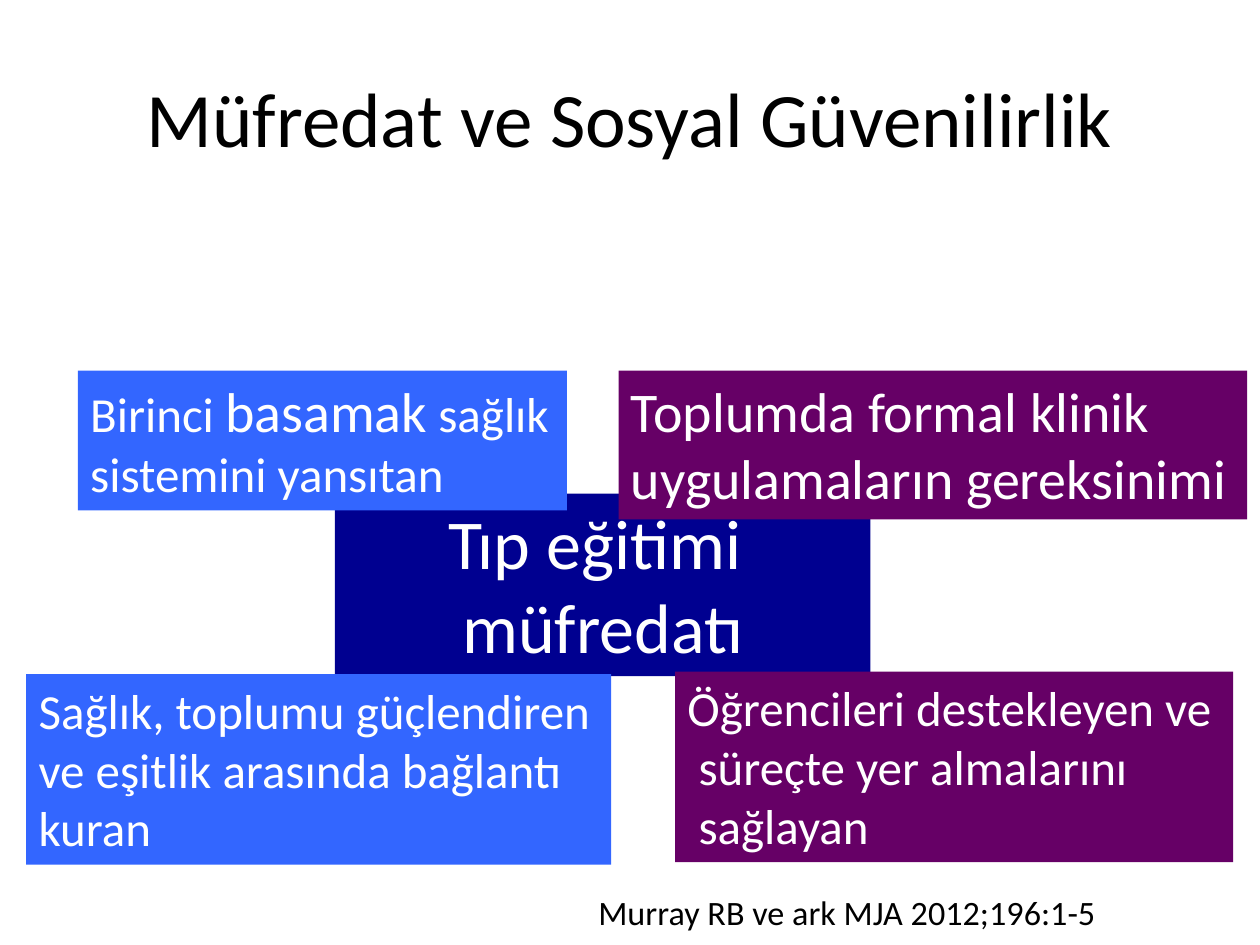
from pptx import Presentation
from pptx.dml.color import RGBColor
from pptx.enum.text import MSO_ANCHOR, MSO_AUTO_SIZE, PP_ALIGN
from pptx.util import Cm, Pt

BLACK = RGBColor(0x00, 0x00, 0x00)
WHITE = RGBColor(0xFF, 0xFF, 0xFF)
NAVY = RGBColor(0x00, 0x00, 0x90)
BLUE = RGBColor(0x33, 0x66, 0xFF)
PLUM = RGBColor(0x66, 0x00, 0x66)


def write(frame, lines, size=28, color=WHITE, align=PP_ALIGN.LEFT, font="Calibri"):
    """Fill a frame; a line is a string or a list of (text, size) parts."""
    for i, line in enumerate(lines):
        par = frame.add_paragraph() if i else frame.paragraphs[0]
        par.alignment = align
        parts = [(line, size)] if isinstance(line, str) else line
        for text, points in parts:
            run = par.add_run()
            run.text = text
            run.font.name = font
            run.font.size = Pt(points)
            run.font.color.rgb = color


class Deck:
    def __init__(self, wide, high):
        self.show = Presentation()
        self.show.slide_width, self.show.slide_height = Cm(wide), Cm(high)
        self.slide = self.show.slides.add_slide(self.show.slide_layouts[5])

    def title(self, text, place):
        head = self.slide.shapes.title
        head.left, head.top, head.width, head.height = map(Cm, place)
        head.text_frame.vertical_anchor = MSO_ANCHOR.MIDDLE
        write(head.text_frame, [text], size=44, color=BLACK, align=PP_ALIGN.CENTER)

    def box(self, lines, place, fill, wrap=False, **style):
        item = self.slide.shapes.add_textbox(*map(Cm, place))
        item.fill.solid()
        item.fill.fore_color.rgb = fill
        frame = item.text_frame
        frame.word_wrap = wrap
        frame.auto_size = MSO_AUTO_SIZE.SHAPE_TO_FIT_TEXT
        write(frame, lines, **style)

    def note(self, text, place):
        frame = self.slide.shapes.add_textbox(*map(Cm, place)).text_frame
        frame.word_wrap = True
        frame.vertical_anchor = MSO_ANCHOR.MIDDLE
        write(frame, [text], size=19.5, color=BLACK, align=PP_ALIGN.CENTER)


def main():
    deck = Deck(25.4, 19.05)
    deck.title("Müfredat ve Sosyal Güvenilirlik", (1.27, 0.76, 22.86, 3.18))

    # Core theme, behind the four corner boxes
    deck.box(["Tıp eğitimi ", "müfredatı"], (6.75, 9.95, 10.8, 3.68), NAVY,
             wrap=True, size=40, align=PP_ALIGN.CENTER)

    # Left side
    deck.box([[("Birinci ", 28), ("basamak", 32), (" sağlık", 28)],
              "sistemini yansıtan"], (1.57, 7.47, 9.86, 2.82), BLUE)
    deck.box(["Sağlık, toplumu güçlendiren", "ve eşitlik arasında bağlantı", "kuran"],
             (0.53, 13.59, 11.79, 3.84), BLUE)

    # Right side
    deck.box(["Toplumda formal klinik", "uygulamaların gereksinimi"],
             (12.47, 7.47, 12.67, 3), PLUM, size=32)
    deck.box(["Öğrencileri destekleyen ve", " süreçte yer almalarını", " sağlayan"],
             (13.61, 13.54, 11.25, 3.84), PLUM)

    # Source
    deck.note("Murray RB ve ark MJA 2012;196:1-5", (10.64, 16.79, 12.88, 3.18))
    deck.show.save("out.pptx")


if __name__ == "__main__":
    main()
